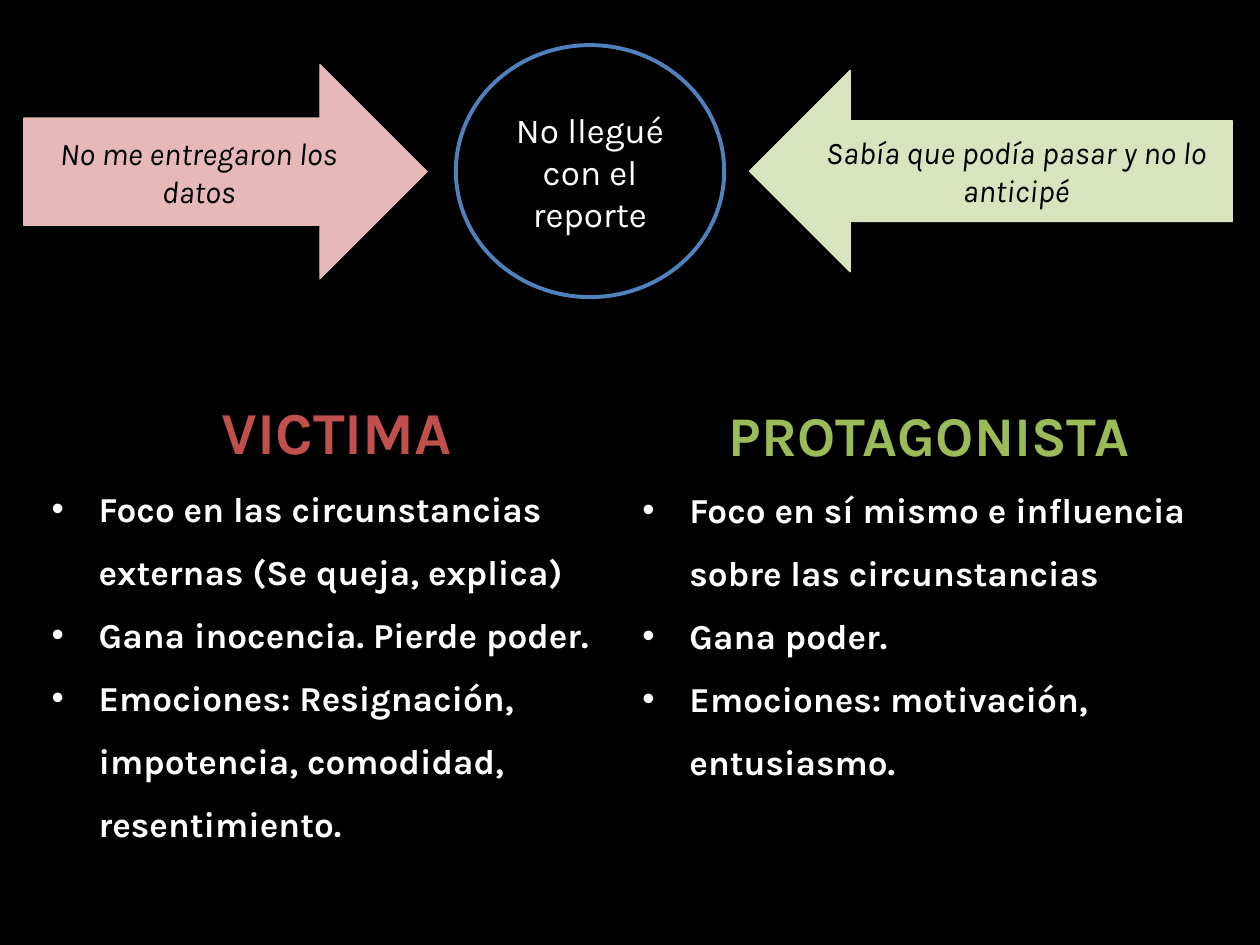
from lxml.etree import SubElement
from pptx import Presentation
from pptx.dml.color import RGBColor
from pptx.enum.shapes import MSO_SHAPE
from pptx.enum.text import MSO_ANCHOR, PP_ALIGN
from pptx.oxml.ns import qn
from pptx.util import Cm, Pt

# Content: frames are left, top, width, height in centimetres
SHAPES = [
    {"kind": MSO_SHAPE.OVAL, "frame": (9.19, 0.91, 5.41, 5.08),
     "text": "No llegué con el reporte", "style": "event",
     "fill": None, "line": "event", "weight": 2.25},
    {"kind": MSO_SHAPE.RIGHT_ARROW, "frame": (0.48, 1.3, 8.13, 4.32),
     "text": "No me entregaron los datos", "style": "quote",
     "fill": "victim_light", "line": "victim_light", "weight": 0.75},
    {"kind": MSO_SHAPE.LEFT_ARROW, "frame": (15.11, 1.42, 9.73, 4.06),
     "text": "Sabía que podía pasar y no lo anticipé", "style": "quote",
     "fill": "hero_light", "line": "hero_light", "weight": 0.75},
]
COLUMNS = [
    {"frame": (0.79, 7.34, 12.01, 9.58), "title": "VICTIMA", "style": "victim",
     "points": ["Foco en las circunstancias externas (Se queja, explica)",
                "Gana inocencia. Pierde poder.",
                "Emociones: Resignación, impotencia, comodidad, resentimiento."]},
    {"frame": (12.7, 5.94, 12.07, 11.3), "title": "PROTAGONISTA", "style": "hero",
     "points": ["Foco en sí mismo e influencia sobre las circunstancias",
                "Gana poder.",
                "Emociones: motivación, entusiasmo."]},
]

THEME = {
    "font": "Karla",
    "colors": {"page": "000000", "event": "4F81BD", "white": "FFFFFF",
               "black": "000000", "victim": "C0504D", "hero": "9BBB59",
               "victim_light": "E6B9B8", "hero_light": "D7E4BD"},
    "styles": {
        "event": {"size": Pt(20), "color": "white"},
        "quote": {"size": Pt(18), "color": "black", "italic": True},
        "victim": {"size": Pt(34), "color": "victim", "bold": True},
        "hero": {"size": Pt(32), "color": "hero", "bold": True},
        "point": {"size": Pt(20), "color": "white", "bold": True},
    },
}
INDENT = Cm(0.95)
LINE_SPACING = 1.5


def color(name):
    return RGBColor.from_string(THEME["colors"][name])


def write(paragraph, text, style):
    span = paragraph.add_run()
    span.text = text
    span.font.name = THEME["font"]
    for key, value in THEME["styles"][style].items():
        if key == "color":
            span.font.color.rgb = color(value)
        else:
            setattr(span.font, key, value)


def add_bullet(paragraph):
    properties = paragraph._p.get_or_add_pPr()
    properties.set("marL", str(INDENT))
    properties.set("indent", str(-INDENT))
    SubElement(properties, qn("a:buFont"), typeface="Arial")
    SubElement(properties, qn("a:buChar"), char="•")


def prepare(box):
    frame = box.text_frame
    frame.word_wrap = True
    frame.vertical_anchor = MSO_ANCHOR.MIDDLE
    frame.paragraphs[0].alignment = PP_ALIGN.CENTER
    return frame


def add_labelled_shape(page, item):
    shape = page.shapes.add_shape(item["kind"], *map(Cm, item["frame"]))
    shape.shadow.inherit = False
    if item["fill"]:
        shape.fill.solid()
        shape.fill.fore_color.rgb = color(item["fill"])
    else:
        shape.fill.background()
    shape.line.color.rgb = color(item["line"])
    shape.line.width = Pt(item["weight"])
    write(prepare(shape).paragraphs[0], item["text"], item["style"])


def add_column(page, column):
    frame = prepare(page.shapes.add_textbox(*map(Cm, column["frame"])))
    write(frame.paragraphs[0], column["title"], column["style"])
    for point in column["points"]:
        paragraph = frame.add_paragraph()
        add_bullet(paragraph)
        write(paragraph, point, "point")
    for paragraph in frame.paragraphs:
        paragraph.line_spacing = LINE_SPACING


def main():
    deck = Presentation()
    deck.slide_width, deck.slide_height = Cm(25.4), Cm(19.05)
    page = deck.slides.add_slide(deck.slide_layouts[6])
    page.background.fill.solid()
    page.background.fill.fore_color.rgb = color("page")

    # Event and the two ways to explain it
    for item in SHAPES:
        add_labelled_shape(page, item)

    # Comparison of the two attitudes
    for column in COLUMNS:
        add_column(page, column)

    deck.save("out.pptx")


if __name__ == "__main__":
    main()
